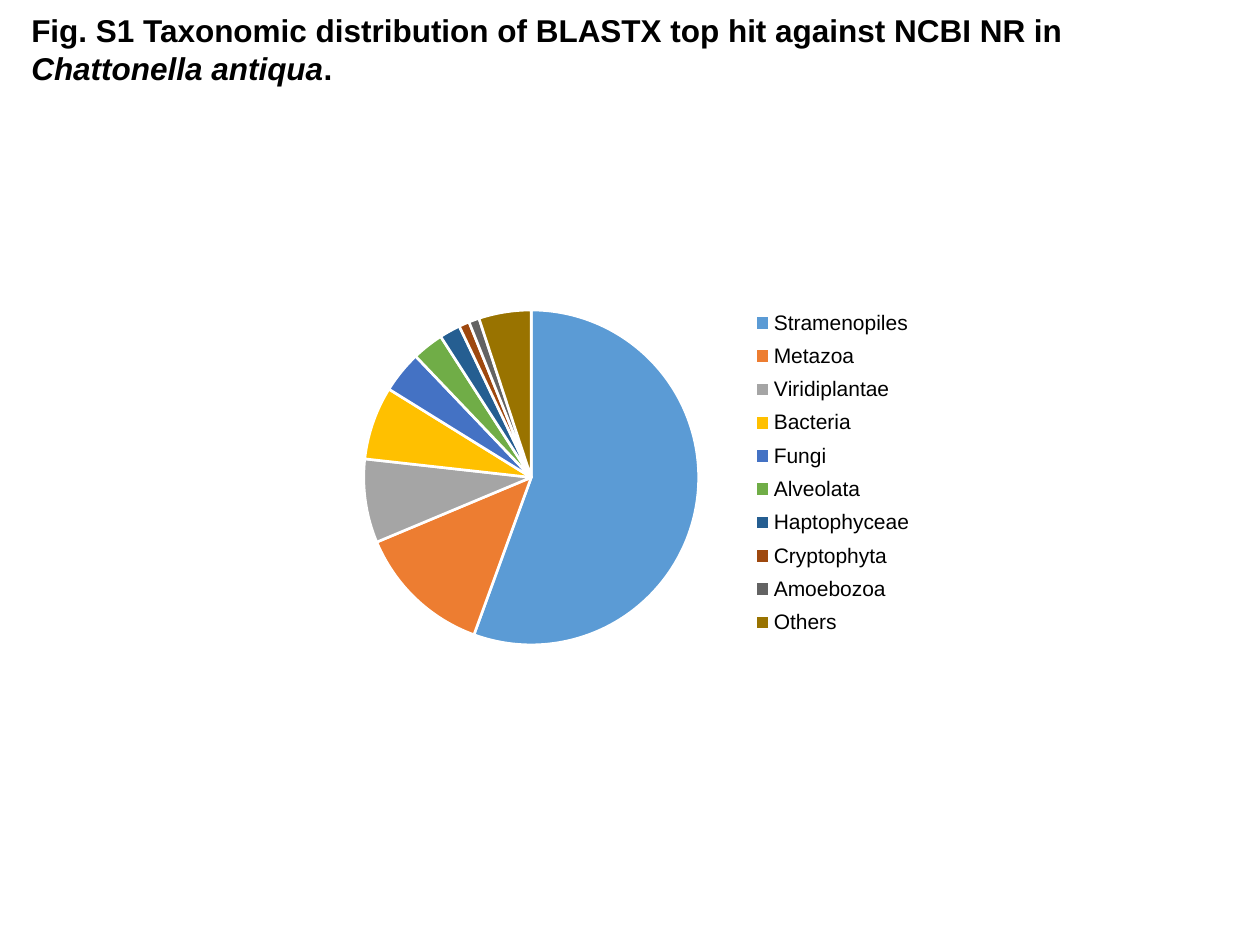
from dataclasses import dataclass

from lxml.etree import SubElement
from pptx import Presentation
from pptx.chart.chart import Chart
from pptx.chart.data import CategoryChartData
from pptx.dml.color import RGBColor
from pptx.enum.chart import XL_CHART_TYPE, XL_LEGEND_POSITION
from pptx.enum.text import MSO_AUTO_SIZE
from pptx.oxml.ns import qn
from pptx.slide import Slide
from pptx.util import Inches, Pt


@dataclass(frozen=True)
class Theme:
    font: str = "Arial"
    text: str = "000000"
    border: str = "FFFFFF"
    title_size: float = 18
    chart_size: float = 12
    border_width: float = 1.5


@dataclass(frozen=True)
class Box:
    left: float
    top: float
    width: float
    height: float

    def on_slide(self) -> tuple[int, int, int, int]:
        return (
            Inches(self.left * SLIDE_WIDTH),
            Inches(self.top * SLIDE_HEIGHT),
            Inches(self.width * SLIDE_WIDTH),
            Inches(self.height * SLIDE_HEIGHT),
        )


@dataclass(frozen=True)
class Taxon:
    name: str
    hits: int
    color: str


@dataclass(frozen=True)
class TitlePart:
    text: str
    italic: bool = False


THEME = Theme()
SLIDE_WIDTH, SLIDE_HEIGHT = 10, 7.5
TITLE_BOX = Box(0.015, 0.005, 0.938, 0.095)
CHART_BOX = Box(0.251, 0.267, 0.497, 0.467)
PIE_BOX = Box(0.076, 0.13, 0.535, 0.761)
LEGEND_BOX = Box(0.66, 0.11, 0.33, 0.78)

TITLE = (
    TitlePart("Fig. S1 Taxonomic distribution of BLASTX top hit against NCBI NR in "),
    TitlePart("Chattonella antiqua", italic=True),
    TitlePart("."),
)
TAXA = (
    Taxon("Stramenopiles", 55, "5B9BD5"),
    Taxon("Metazoa", 13, "ED7D31"),
    Taxon("Viridiplantae", 8, "A5A5A5"),
    Taxon("Bacteria", 7, "FFC000"),
    Taxon("Fungi", 4, "4472C4"),
    Taxon("Alveolata", 3, "70AD47"),
    Taxon("Haptophyceae", 2, "255E91"),
    Taxon("Cryptophyta", 1, "9E480E"),
    Taxon("Amoebozoa", 1, "636363"),
    Taxon("Others", 5, "997300"),
)


def style_font(font, size: float) -> None:
    font.name = THEME.font
    font.size = Pt(size)
    font.color.rgb = RGBColor.from_string(THEME.text)


def add_title(slide: Slide) -> None:
    text_box = slide.shapes.add_textbox(*TITLE_BOX.on_slide())
    frame = text_box.text_frame
    frame.word_wrap = True
    frame.auto_size = MSO_AUTO_SIZE.SHAPE_TO_FIT_TEXT
    paragraph = frame.paragraphs[0]
    for part in TITLE:
        run = paragraph.add_run()
        run.text = part.text
        style_font(run.font, THEME.title_size)
        run.font.bold = True
        run.font.italic = part.italic


def set_layout(parent, position: int, box: Box, inner: bool = False) -> None:
    for previous in parent.findall(qn("c:layout")):
        parent.remove(previous)
    layout = SubElement(parent, qn("c:layout"))
    parent.insert(position, layout)
    manual = SubElement(layout, qn("c:manualLayout"))
    settings = [("layoutTarget", "inner")] if inner else []
    settings += [("xMode", "edge"), ("yMode", "edge")]
    settings += [("x", box.left), ("y", box.top), ("w", box.width), ("h", box.height)]
    for name, value in settings:
        SubElement(manual, qn(f"c:{name}")).set("val", str(value))


def color_slices(chart: Chart) -> None:
    series = chart.plots[0].series[0]
    for index, taxon in enumerate(TAXA):
        slice_format = series.points[index].format
        slice_format.fill.solid()
        slice_format.fill.fore_color.rgb = RGBColor.from_string(taxon.color)
        slice_format.line.color.rgb = RGBColor.from_string(THEME.border)
        slice_format.line.width = Pt(THEME.border_width)


def add_taxa_chart(slide: Slide) -> None:
    data = CategoryChartData()
    data.categories = [taxon.name for taxon in TAXA]
    data.add_series("Series 1", [taxon.hits for taxon in TAXA])
    chart = slide.shapes.add_chart(XL_CHART_TYPE.PIE, *CHART_BOX.on_slide(), data).chart
    style_font(chart.font, THEME.chart_size)
    chart.has_title = False
    chart.plots[0].vary_by_categories = True
    color_slices(chart)
    chart.has_legend = True
    legend = chart.legend
    legend.position = XL_LEGEND_POSITION.BOTTOM
    legend.include_in_layout = False
    style_font(legend.font, THEME.chart_size)
    set_layout(legend._element, 1, LEGEND_BOX)
    set_layout(chart.plots[0]._element.getparent(), 0, PIE_BOX, inner=True)


def main() -> None:
    presentation = Presentation()
    presentation.slide_width = Inches(SLIDE_WIDTH)
    presentation.slide_height = Inches(SLIDE_HEIGHT)
    slide = presentation.slides.add_slide(presentation.slide_layouts[6])
    add_title(slide)
    add_taxa_chart(slide)
    presentation.save("out.pptx")


if __name__ == "__main__":
    main()
